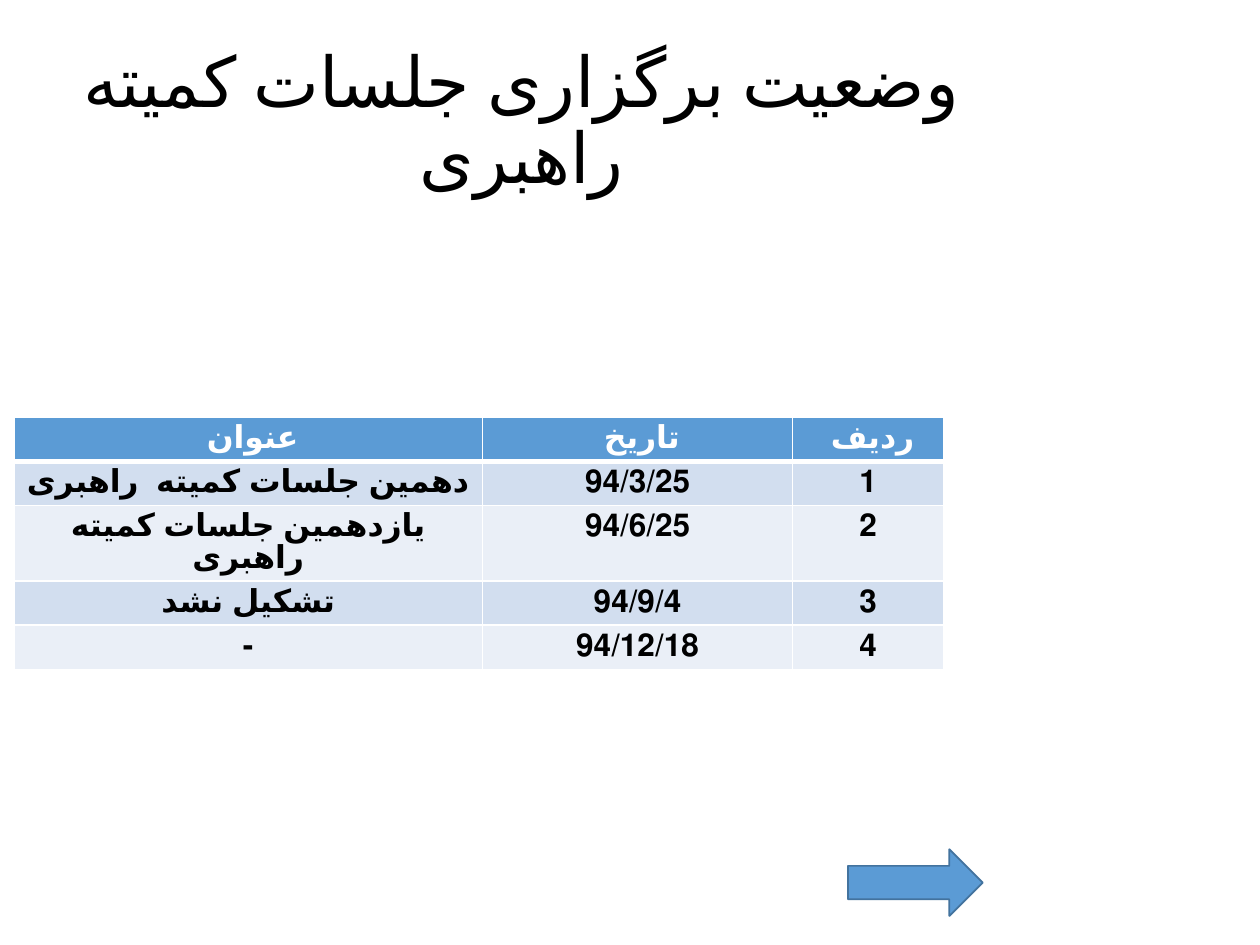
"""Build the slide on the status of the steering committee meetings."""
import lxml.etree
import pptx
import pptx.dml.color
import pptx.enum.lang
import pptx.enum.shapes
import pptx.enum.text
import pptx.oxml.ns
import pptx.util

Inches, Pt = pptx.util.Inches, pptx.util.Pt

HEADING = "وضعیت برگزاری جلسات کمیته راهبری"
MEETINGS = [
    ("عنوان ", "تاریخ ", "ردیف "),
    ("دهمین جلسات کمیته  راهبری", "94/3/25", "1"),
    ("یازدهمین جلسات کمیته راهبری", "94/6/25", "2"),
    ("تشکیل نشد", "94/9/4", "3"),
    ("-", "94/12/18", "4"),
]
COLUMN_WIDTHS = (3.72, 2.46, 1.2)
ROW_HEIGHTS = (0.35, 0.35, 0.6, 0.35, 0.35)
COLORS = {
    "accent": "5B9BD5",
    "outline": "43739E",
    "odd": "D2DEEF",
    "even": "EAEFF7",
    "white": "FFFFFF",
    "black": "000000",
}


def rgb(name):
    return pptx.dml.color.RGBColor.from_string(COLORS[name])


def write(frame, text, size=18, color="black", bold=False, spacing=None, rtl=False):
    frame.word_wrap = True
    paragraph = frame.paragraphs[0]
    paragraph.alignment = pptx.enum.text.PP_ALIGN.CENTER
    paragraph.line_spacing = spacing
    if rtl:
        paragraph._p.get_or_add_pPr().set("rtl", "1")
    run = paragraph.add_run()
    run.text = text
    run.font.name = "Calibri"
    run.font.size = Pt(size)
    run.font.bold = bold
    run.font.color.rgb = rgb(color)
    run.font.language_id = pptx.enum.lang.MSO_LANGUAGE_ID.FARSI


def draw_borders(cell, **widths):
    properties = cell._tc.get_or_add_tcPr()
    qn = pptx.oxml.ns.qn
    for side in "LRTB":
        line = lxml.etree.SubElement(
            properties, qn(f"a:ln{side}"), w=str(Pt(widths.get(side, 1)))
        )
        fill = lxml.etree.SubElement(line, qn("a:solidFill"))
        lxml.etree.SubElement(fill, qn("a:srgbClr"), val=COLORS["white"])


def add_meetings(slide):
    table = slide.shapes.add_table(
        len(MEETINGS), len(COLUMN_WIDTHS), Inches(0.11), Inches(3.31),
        Inches(sum(COLUMN_WIDTHS)), Inches(sum(ROW_HEIGHTS)),
    ).table
    for column, width in zip(table.columns, COLUMN_WIDTHS):
        column.width = Inches(width)
    for index, (row, height) in enumerate(zip(table.rows, ROW_HEIGHTS)):
        row.height = Inches(height)
        header = index == 0
        band = "accent" if header else ("even", "odd")[index % 2]
        for cell, text in zip(row.cells, MEETINGS[index]):
            draw_borders(cell, B=3 if header else 1, T=3 if index == 1 else 1)
            cell.fill.solid()
            cell.fill.fore_color.rgb = rgb(band)
            write(cell.text_frame, text, color="white" if header else "black",
                  bold=True, spacing=Pt(18), rtl=True)


def main():
    deck = pptx.Presentation()
    deck.slide_width, deck.slide_height = Inches(10), Inches(7.5)
    slide = deck.slides.add_slide(deck.slide_layouts[5])

    heading = slide.shapes.title
    heading.left, heading.top = Inches(0.33), Inches(0.4)
    heading.width, heading.height = Inches(7.62), Inches(1.15)
    heading.text_frame.auto_size = pptx.enum.text.MSO_AUTO_SIZE.NONE
    heading.text_frame.vertical_anchor = pptx.enum.text.MSO_ANCHOR.MIDDLE
    write(heading.text_frame, HEADING, size=40, spacing=0.9)

    add_meetings(slide)

    arrow = slide.shapes.add_shape(
        pptx.enum.shapes.MSO_SHAPE.RIGHT_ARROW,
        Inches(6.73), Inches(6.74), Inches(1.07), Inches(0.53),
    )
    arrow.shadow.inherit = False
    arrow.fill.solid()
    arrow.fill.fore_color.rgb = rgb("accent")
    arrow.line.color.rgb = rgb("outline")
    arrow.line.width = Pt(1)

    deck.save("out.pptx")


if __name__ == "__main__":
    main()
